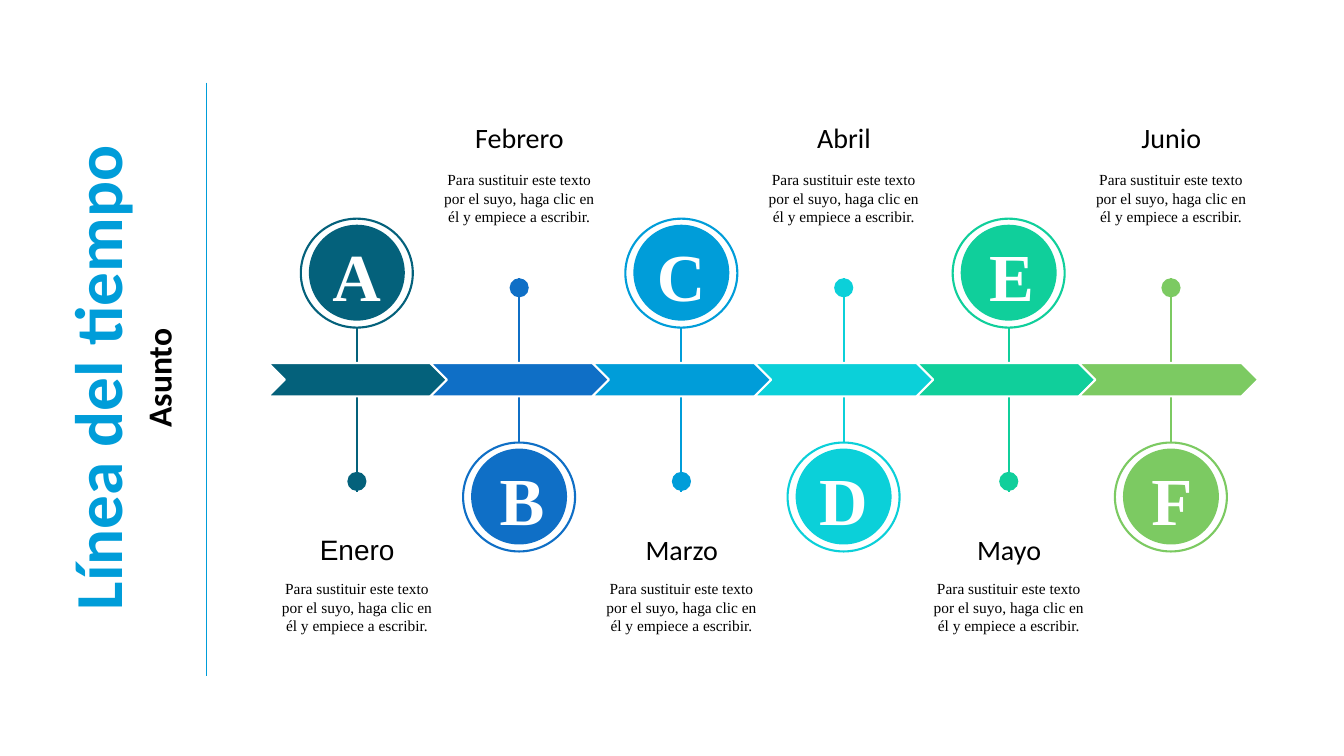
import pptx
import pptx.util
import pptx.dml.color
import pptx.enum.shapes
import pptx.enum.text
import pptx.oxml.ns
import lxml.etree

Pt = pptx.util.Pt
Shape = pptx.enum.shapes.MSO_SHAPE
RGB = pptx.dml.color.RGBColor.from_string
HUES = {"navy": "04617B", "blue": "0F6FC6", "sky": "009DD9", "cyan": "0BD0D9",
        "mint": "10CF9B", "green": "7CCA62", "white": "FFFFFF", "black": "000000"}
BODY = "Para sustituir este texto por el suyo, haga clic en él y empiece a escribir."
SERIF = "Times New Roman"

deck = pptx.Presentation()
deck.slide_width, deck.slide_height = Pt(960), Pt(540)
slide = deck.slides.add_slide(deck.slide_layouts[5])
shapes = slide.shapes


def write(text, left, top, width, height, size, font, hue="black", bold=False, box=None):
    if box is None:
        box = shapes.add_textbox(0, 0, 0, 0)
    box.left, box.top, box.width, box.height = Pt(left), Pt(top), Pt(width), Pt(height)
    frame = box.text_frame
    frame.text = text
    frame.word_wrap = True
    frame.auto_size = pptx.enum.text.MSO_AUTO_SIZE.NONE
    frame.vertical_anchor = pptx.enum.text.MSO_ANCHOR.TOP
    para = frame.paragraphs[0]
    para.alignment = pptx.enum.text.PP_ALIGN.CENTER
    para.font.size, para.font.name, para.font.bold = Pt(size), font, bold
    para.font.color.rgb = RGB(HUES[hue])
    return box


def draw(kind, left, top, width, height, fill=None, line=None):
    # kind None draws a straight line
    if kind is None:
        item = shapes.add_connector(pptx.enum.shapes.MSO_CONNECTOR.STRAIGHT, Pt(left),
                                    Pt(top), Pt(left + width), Pt(top + height))
        lxml.etree.SubElement(item._element.spPr, pptx.oxml.ns.qn("a:effectLst"))
    else:
        item = shapes.add_shape(kind, Pt(left), Pt(top), Pt(width), Pt(height))
        item.shadow.inherit = False
        if fill:
            item.fill.solid()
            item.fill.fore_color.rgb = RGB(HUES[fill])
        else:
            item.fill.background()
    if line:
        item.line.color.rgb = RGB(HUES[line])
        item.line.width = Pt(1.5)
    else:
        item.line.fill.background()
    return item


# Sideways title, subtitle and rule
title = write("Línea del tiempo", -201.6, 237.6, 540, 64.8, 48, "Calibri", "sky", True,
              shapes.title)
title.rotation = 270
topic = write("Asunto", -157, 252, 540, 36, 24, "Calibri", bold=True)
topic.rotation = 270
rule = draw(None, 147.6, 59, 0, 424, line="sky")
rule.line.width = Pt(1)

# Month, letter, colour, month font, offset of the letter box
months = [("Enero", "A", "navy", "Arial", 24.5), ("Febrero", "B", "blue", "Calibri", 21),
          ("Marzo", "C", "sky", "Calibri", 24.5), ("Abril", "D", "cyan", "Calibri", 24.5),
          ("Mayo", "E", "mint", "Calibri", 21), ("Junio", "F", "green", "Calibri", 21)]

for i, (month, sign, hue, font, shift) in enumerate(months):
    mid = 254.9 + 115.9 * i + (2 if i > 3 else 0)
    above = i % 2 == 0  # badge above the band, text below
    ring = 156.2 if above else 316.1
    stem, dot, head, note = (234, 337, 376.6, 410.4) if above else (198.7, 198.7, 82.8, 118.1)

    # Stem with its dot
    draw(None, mid, stem, 0, 117.4, line=hue)
    draw(Shape.FLOWCHART_CONNECTOR, mid - 6.8, dot, 13.7, 13.7, hue)

    # Badge with its letter
    draw(Shape.OVAL, mid - 40, ring, 80, 77.8, line=hue)
    draw(Shape.OVAL, mid - 33.5, ring + 5.1, 67, 67, hue, hue)
    write(sign, mid - shift, ring + 7.9, 41.8, 64.8, 48, SERIF, "white", True)

    # Month and note
    write(month, mid - 64, head, 128.5, 31, 20, font)
    write(BODY, mid - 64, note, 128.2, 59.8, 11, SERIF)

# Band of chevrons
for i, (month, sign, hue, font, shift) in enumerate(months):
    draw(Shape.CHEVRON, 191.5 + 115.8 * i, 259.3, 128.2, 23.8, hue, "white")

deck.save("out.pptx")
